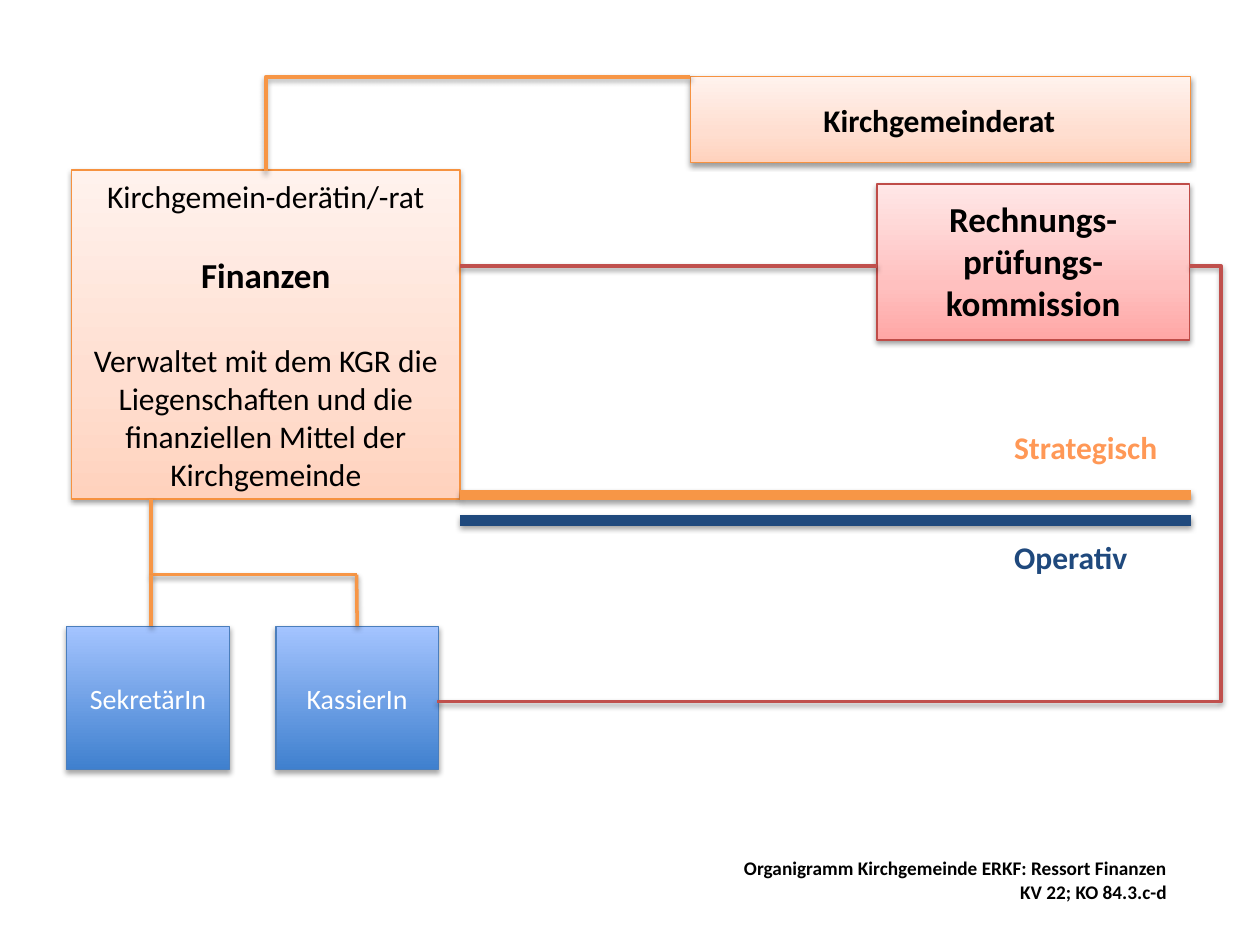
from copy import deepcopy

from lxml import etree
from pptx import Presentation
from pptx.dml.color import RGBColor
from pptx.enum import shapes, text
from pptx.oxml.ns import qn
from pptx.util import Inches, Pt

COLORS = {
    "orange": "F79646", "orange_edge": "F69240",
    "red": "C0504D", "red_edge": "BF4C48",
    "navy": "1F497D", "blue_edge": "4B7EBC",
    "black": "000000", "white": "FFFFFF",
}
GRADIENTS = {
    "orange": [(0, "FFD2BD"), (35, "FFDED0"), (100, "FFF2ED")],
    "red": [(0, "FFA6A5"), (35, "FFC0BF"), (100, "FFE7E7")],
    "blue": [(0, "3F80CE"), (100, "A4C4FF")],
    "strategic": [(0, "9D4700"), (78, "FF9856"), (100, "FFF5F1")],
}
ALIGN = text.PP_ALIGN


def rgb(name):
    return RGBColor.from_string(COLORS[name])


def set_gradient(fill, name, angle=90):
    """Give a fill the named stops; angle runs counter-clockwise."""
    fill.gradient()
    fill.gradient_angle = angle
    stops = fill.gradient_stops
    stop_list = stops[0]._gs.getparent()
    for _ in range(len(GRADIENTS[name]) - len(stops)):
        stop_list.append(deepcopy(stop_list[-1]))
    for stop, (position, color) in zip(fill.gradient_stops, GRADIENTS[name]):
        stop.position = position / 100
        stop.color.rgb = RGBColor.from_string(color)


def add_shadow(s, alpha=38, dist=1.6):
    """Add a soft shadow that falls straight down."""
    sp_pr = s._element.spPr
    for old in sp_pr.findall(qn("a:effectLst")):
        sp_pr.remove(old)
    effects = etree.SubElement(sp_pr, qn("a:effectLst"))
    shadow = etree.SubElement(effects, qn("a:outerShdw"), blurRad=str(Pt(3.1)),
                              dist=str(Pt(dist)), dir="5400000", rotWithShape="0")
    color = etree.SubElement(shadow, qn("a:srgbClr"), val=COLORS["black"])
    etree.SubElement(color, qn("a:alpha"), val=str(alpha * 1000))


def set_text(s, words, size, color="black", bold=False, align=ALIGN.CENTER):
    s.text_frame.text = words
    for p in s.text_frame.paragraphs:
        p.alignment = align
        for r in p.runs:
            r.font.name = "Calibri"
            r.font.size = Pt(size)
            r.font.bold = bold
            if color in GRADIENTS:
                set_gradient(r.font.fill, color, 270)
            else:
                r.font.color.rgb = rgb(color)


def add_box(slide, at, color, kind=shapes.MSO_SHAPE.RECTANGLE, **shadow):
    s = slide.shapes.add_shape(kind, *map(Inches, at))
    set_gradient(s.fill, color)
    s.line.color.rgb = rgb(color + "_edge")
    s.line.width = Pt(0.75)
    add_shadow(s, **shadow)
    return s


def add_label(slide, at, words, size=18, **style):
    s = slide.shapes.add_textbox(*map(Inches, at))
    s.text_frame.word_wrap = True
    s.text_frame.auto_size = text.MSO_AUTO_SIZE.SHAPE_TO_FIT_TEXT
    set_text(s, words, size, **style)


def add_line(slide, start, end, color, width=2, bend=None):
    """Draw a straight line, or an elbow whose middle leg lies at bend."""
    kind = shapes.MSO_CONNECTOR.STRAIGHT if bend is None else shapes.MSO_CONNECTOR.ELBOW
    s = slide.shapes.add_connector(kind, *map(Inches, start + end))
    s.line.color.rgb = rgb(color)
    s.line.width = Pt(width)
    if bend is not None:
        guides = s._element.spPr.find(qn("a:prstGeom")).get_or_add_avLst()
        etree.SubElement(guides, qn("a:gd"), name="adj1", fmla=f"val {round(bend * 100000)}")
    add_shadow(s)
    return s


def add_corner(slide, start, end, color):
    """Draw a connector with one bend, horizontal first."""
    s = add_line(slide, start, end, color, bend=1)
    geometry = s._element.spPr.find(qn("a:prstGeom"))
    geometry.set("prst", "bentConnector2")
    for guide in list(geometry.avLst):
        geometry.avLst.remove(guide)


def add_finance(slide):
    left, width = 0.57, 3.08
    add_box(slide, (left, 1.35, width, 2.61), "orange",
            shapes.MSO_SHAPE.FLOWCHART_PROCESS)
    add_label(slide, (left, 1.96, width, 0.44), "Finanzen", 20, bold=True)
    add_label(slide, (left, 1.36, width, 0.4), "Kirchgemein-derätin/-rat")
    add_label(slide, (left, 2.66, width, 1.31),
              "Verwaltet mit dem KGR die Liegenschaften und die "
              "finanziellen Mittel der Kirchgemeinde")


def add_staff(slide):
    boxes = []
    for left, words in ((0.53, "SekretärIn"), (2.19, "KassierIn")):
        s = add_box(slide, (left, 4.97, 1.29, 1.14), "blue", alpha=35, dist=1.8)
        s.text_frame.vertical_anchor = text.MSO_ANCHOR.MIDDLE
        set_text(s, words, 16, "white")
        boxes.append(s)
    add_line(slide, (1.2, 3.96), (2.83, 4.56), "orange", bend=0)
    cashier_line = add_line(slide, (2.83, 4.56), (2.83, 4.97), "orange")
    cashier_line.end_connect(boxes[1], 0)
    add_line(slide, (1.2, 4.56), (1.2, 4.97), "orange")


def add_levels(slide):
    """Separate the strategic level from the operative one."""
    add_label(slide, (7.95, 3.35, 1.62, 0.4), "Strategisch",
              color="strategic", bold=True, align=ALIGN.LEFT)
    add_label(slide, (7.95, 4.22, 1.68, 0.4), "Operativ",
              color="navy", bold=True, align=ALIGN.LEFT)
    for y, color in ((3.93, "orange"), (4.13, "navy")):
        add_line(slide, (3.65, y), (9.45, y), color, width=6)


def add_audit(slide):
    add_box(slide, (6.96, 1.46, 2.48, 1.24), "red")
    add_label(slide, (6.96, 1.52, 2.48, 1.11),
              "Rechnungs-prüfungs-kommission", 20, bold=True)
    add_line(slide, (6.96, 2.11), (3.65, 2.11), "red")
    add_line(slide, (9.44, 2.11), (3.47, 5.57), "red", bend=-0.042)


def add_council(slide):
    add_box(slide, (5.48, 0.61, 3.97, 0.68), "orange")
    add_label(slide, (5.47, 0.75, 3.97, 0.4), "Kirchgemeinderat", bold=True)
    add_corner(slide, (5.48, 0.61), (2.11, 1.36), "orange")


def main():
    prs = Presentation()
    prs.slide_width, prs.slide_height = Inches(10), Inches(7.5)
    slide = prs.slides.add_slide(prs.slide_layouts[6])
    add_finance(slide)
    add_staff(slide)
    add_levels(slide)
    add_audit(slide)
    add_label(slide, (3.9, 6.75, 5.46, 0.47),
              "Organigramm Kirchgemeinde ERKF: Ressort Finanzen\nKV 22; KO 84.3.c-d",
              11, bold=True, align=ALIGN.RIGHT)
    add_council(slide)
    prs.save("out.pptx")


if __name__ == "__main__":
    main()
